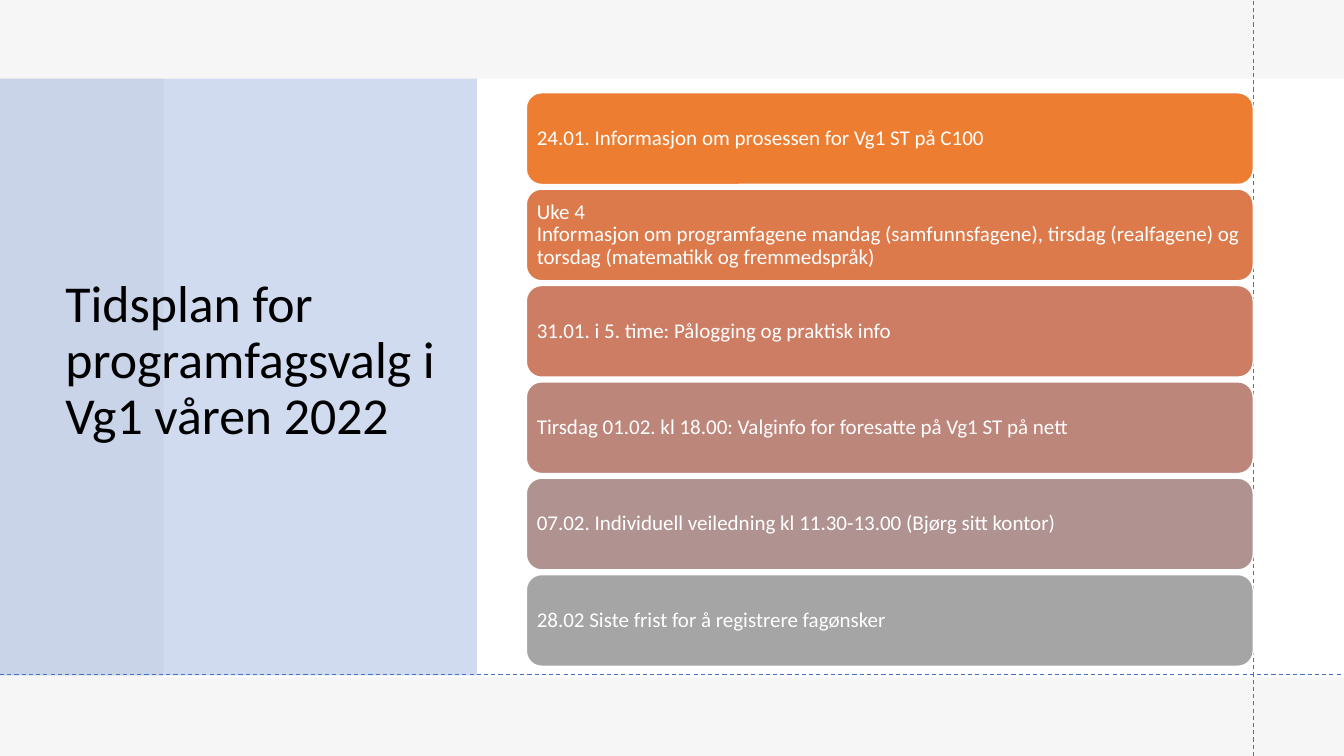
from dataclasses import dataclass

import pptx
import pptx.dml.color
import pptx.enum.dml
import pptx.enum.shapes
import pptx.enum.text
import pptx.oxml.ns
import pptx.oxml.xmlchemy
import pptx.util
from lxml import etree
from pptx.util import Inches

COLORS = {
    "white": "FFFFFF",
    "black": "000000",
    "grey": "E7E6E6",
    "blue": "4472C4",
    "step_1": "ED7D31",
    "step_2": "DC7A4B",
    "step_3": "CC7D64",
    "step_4": "BD867B",
    "step_5": "B09391",
    "step_6": "A5A5A5",
}
FONT = "Calibri"
SLIDE_WIDTH, SLIDE_HEIGHT = 13.33, 7.5
STEP_LEFT, STEP_TOP, STEP_WIDTH, STEP_HEIGHT = 5.22, 0.92, 7.21, 0.91
STEP_PITCH = 0.956


@dataclass
class Panel:
    left: float
    top: float
    width: float
    height: float
    color: str
    opacity: int = 100


@dataclass
class Guide:
    start_x: float
    start_y: float
    end_x: float
    end_y: float


@dataclass
class Step:
    lines: list[str]
    color: str


PANELS = [
    Panel(0, 0, SLIDE_WIDTH, SLIDE_HEIGHT, "white"),
    Panel(0, 0, SLIDE_WIDTH, SLIDE_HEIGHT, "grey", 35),
    Panel(1.62, 0.78, 11.71, 5.94, "white"),
    Panel(0, 0.78, 4.73, 5.92, "blue", 25),
]
GUIDES = [
    Guide(12.43, SLIDE_HEIGHT, 12.43, 0),
    Guide(0, 6.69, SLIDE_WIDTH, 6.69),
]
STEPS = [
    Step(["24.01. Informasjon om prosessen for Vg1 ST på C100"], "step_1"),
    Step(
        [
            "Uke 4",
            "Informasjon om programfagene mandag (samfunnsfagene), tirsdag (realfagene) og "
            "torsdag (matematikk og fremmedspråk)",
        ],
        "step_2",
    ),
    Step(["31.01. i 5. time: Pålogging og praktisk info"], "step_3"),
    Step(["Tirsdag 01.02. kl 18.00: Valginfo for foresatte på Vg1 ST på nett"], "step_4"),
    Step(["07.02. Individuell veiledning kl 11.30-13.00 (Bjørg sitt kontor)"], "step_5"),
    Step(["28.02 Siste frist for å registrere fagønsker"], "step_6"),
]


def rgb(name: str) -> pptx.dml.color.RGBColor:
    return pptx.dml.color.RGBColor.from_string(COLORS[name])


def write_text(shape, lines: list[str], size: float, color: str, inset: float) -> None:
    frame = shape.text_frame
    frame.word_wrap = True
    frame.vertical_anchor = pptx.enum.text.MSO_ANCHOR.MIDDLE
    frame.margin_left = frame.margin_right = Inches(inset)
    frame.margin_top = frame.margin_bottom = Inches(inset)
    paragraph = frame.paragraphs[0]
    paragraph.alignment = pptx.enum.text.PP_ALIGN.LEFT
    paragraph.line_spacing = 0.9
    paragraph.font.name = FONT
    paragraph.font.size = pptx.util.Pt(size)
    paragraph.font.color.rgb = rgb(color)
    for index, line in enumerate(lines):
        if index:
            paragraph.add_line_break()
        paragraph.add_run().text = line


def draw_panel(slide, panel: Panel) -> None:
    shape = slide.shapes.add_shape(
        pptx.enum.shapes.MSO_SHAPE.RECTANGLE,
        Inches(panel.left), Inches(panel.top), Inches(panel.width), Inches(panel.height),
    )
    shape.shadow.inherit = False
    shape.fill.solid()
    shape.fill.fore_color.rgb = rgb(panel.color)
    shape.line.fill.background()
    if panel.opacity < 100:
        color = shape._element.spPr.find(".//" + pptx.oxml.ns.qn("a:srgbClr"))
        alpha = etree.SubElement(color, pptx.oxml.ns.qn("a:alpha"))
        alpha.set("val", str(panel.opacity * 1000))


def draw_title(slide) -> None:
    title = slide.shapes.add_textbox(Inches(0.55), Inches(0.74), Inches(3.95), Inches(5.69))
    write_text(title, ["Tidsplan for programfagsvalg i Vg1 våren 2022"], 37, "black", 0.1)


def draw_guide(slide, guide: Guide) -> None:
    connector = slide.shapes.add_connector(
        pptx.enum.shapes.MSO_CONNECTOR.STRAIGHT,
        Inches(guide.start_x), Inches(guide.start_y), Inches(guide.end_x), Inches(guide.end_y),
    )
    connector.line.color.rgb = rgb("blue")
    connector.line.width = pptx.util.Pt(0.75)
    connector.line.dash_style = pptx.enum.dml.MSO_LINE.DASH
    etree.SubElement(connector._element.spPr, pptx.oxml.ns.qn("a:effectLst"))


def draw_step(slide, step: Step, index: int) -> None:
    shape = slide.shapes.add_shape(
        pptx.enum.shapes.MSO_SHAPE.ROUNDED_RECTANGLE,
        Inches(STEP_LEFT), Inches(STEP_TOP + index * STEP_PITCH),
        Inches(STEP_WIDTH), Inches(STEP_HEIGHT),
    )
    shape.shadow.inherit = False
    shape.fill.solid()
    shape.fill.fore_color.rgb = rgb(step.color)
    shape.line.color.rgb = rgb("white")
    shape.line.width = pptx.util.Pt(1)
    write_text(shape, step.lines, 15, "white", 0.06)


def main() -> None:
    presentation = pptx.Presentation()
    presentation.slide_width = Inches(SLIDE_WIDTH)
    presentation.slide_height = Inches(SLIDE_HEIGHT)
    slide = presentation.slides.add_slide(presentation.slide_layouts[6])
    for panel in PANELS:
        draw_panel(slide, panel)
    draw_title(slide)
    for guide in GUIDES:
        draw_guide(slide, guide)
    for index, step in enumerate(STEPS):
        draw_step(slide, step, index)
    presentation.save("out.pptx")


if __name__ == "__main__":
    main()
